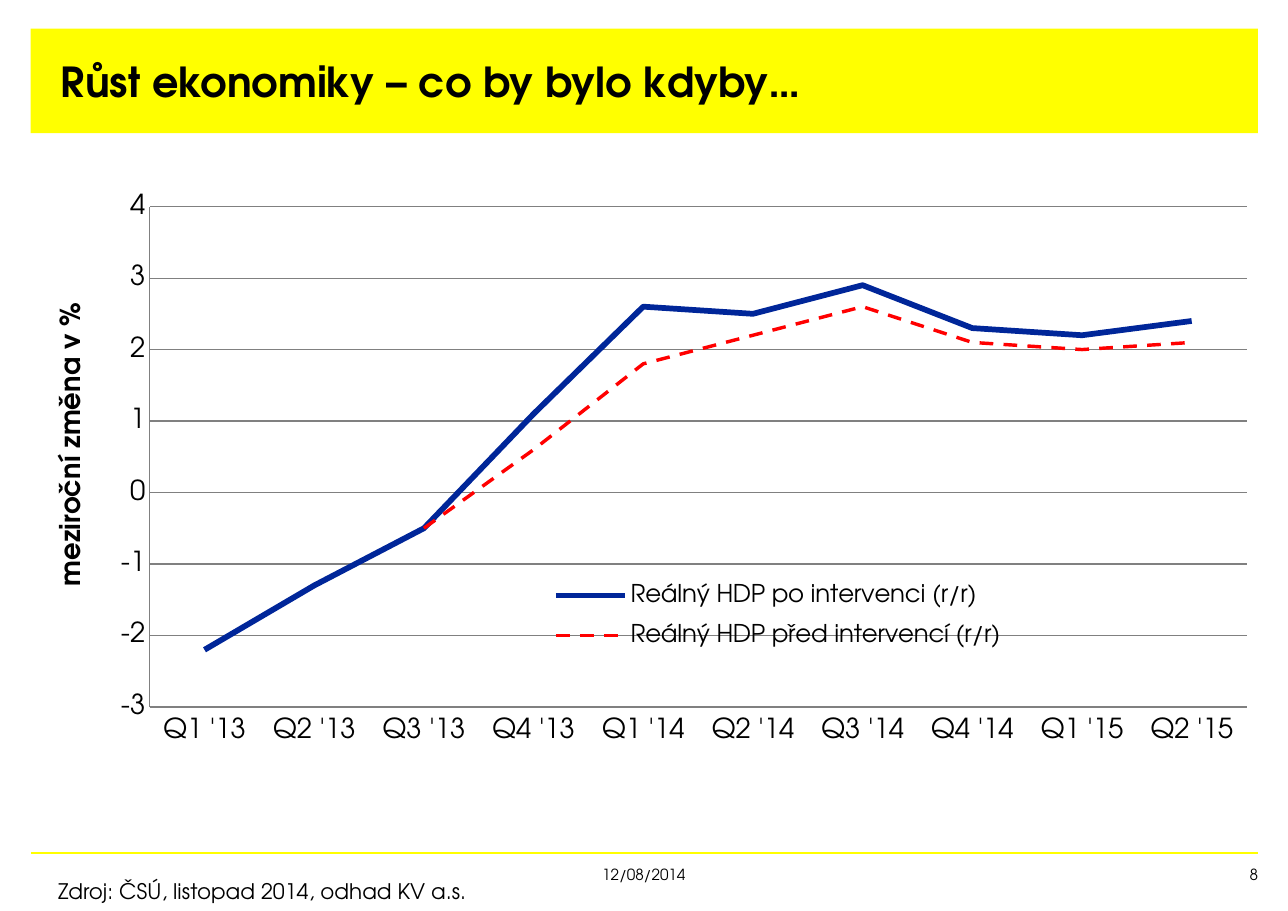
"""Builds a slide with a line chart of Czech GDP growth with and without intervention."""
from dataclasses import dataclass

from lxml import etree
from pptx import Presentation
from pptx import util as u
from pptx.chart import data
from pptx.dml import color
from pptx.enum import chart as ch, dml, shapes, text
from pptx.oxml import ns


@dataclass(frozen=True)
class Theme:
    font: str = "TeX Gyre Adventor"
    ink: str = "000000"
    band: str = "FFFF00"
    grid: str = "808080"
    after: str = "002699"
    before: str = "FF0000"
    title_size: float = 27
    chart_size: float = 18
    legend_size: float = 16
    source_size: float = 14
    footer_size: float = 10


def apply(target, values):
    for name, value in values.items():
        setattr(target, name, value)


def place(shape, box):
    apply(shape, dict(zip(("left", "top", "width", "height"), map(u.Cm, box))))


def set_layout(parent, index, **values):
    for old in parent.findall(ns.qn("c:layout")):
        parent.remove(old)
    layout = etree.Element(ns.qn("c:layout"))
    manual = etree.SubElement(layout, ns.qn("c:manualLayout"))
    for name, value in values.items():
        etree.SubElement(manual, ns.qn(f"c:{name}")).set("val", str(value))
    parent.insert(index, layout)


class SlideBuilder:
    def __init__(self, slide, theme):
        self.slide = slide
        self.theme = theme

    def style_font(self, font, size, bold=False):
        apply(font, {"name": self.theme.font, "size": u.Pt(size), "bold": bold})
        font.color.rgb = color.RGBColor.from_string(self.theme.ink)

    def style_line(self, line, rgb, width):
        line.color.rgb = color.RGBColor.from_string(rgb)
        line.width = u.Pt(width)

    def fill_text(self, shape, words, size, align, anchor, insets=(0, 0, 0, 0), bold=False):
        frame = shape.text_frame
        margins = ("margin_left", "margin_top", "margin_right", "margin_bottom")
        apply(frame, {"word_wrap": True, "auto_size": text.MSO_AUTO_SIZE.NONE,
                      "vertical_anchor": anchor, **dict(zip(margins, map(u.Cm, insets)))})
        paragraph = frame.paragraphs[0]
        paragraph.alignment = align
        run = paragraph.add_run()
        run.text = words
        self.style_font(run.font, size, bold)

    def band(self, box):
        band = self.slide.shapes.add_shape(shapes.MSO_SHAPE.RECTANGLE, *map(u.Cm, box))
        band.shadow.inherit = False
        band.fill.solid()
        band.fill.fore_color.rgb = color.RGBColor.from_string(self.theme.band)
        band.line.fill.background()
        self.slide.shapes._spTree.insert(2, band._element)

    def title(self, words, box):
        title = self.slide.shapes.title
        place(title, box)
        self.fill_text(title, words, self.theme.title_size, text.PP_ALIGN.LEFT,
                       text.MSO_ANCHOR.MIDDLE, bold=True)

    def rule(self, left, right, top):
        rule = self.slide.shapes.add_connector(
            shapes.MSO_CONNECTOR.STRAIGHT, *map(u.Cm, (left, top, right, top)))
        self.style_line(rule.line, self.theme.band, 1)
        etree.SubElement(rule._element.spPr, ns.qn("a:effectLst"))

    def label(self, words, box, size, align=text.PP_ALIGN.LEFT, insets=(0, 0, 0, 0)):
        label = self.slide.shapes.add_textbox(*map(u.Cm, box))
        self.fill_text(label, words, size, align, text.MSO_ANCHOR.TOP, insets)

    def line_chart(self, box, categories, series, value_title):
        chart_data = data.CategoryChartData(number_format="0.0")
        chart_data.categories = categories
        for name, values, *_ in series:
            chart_data.add_series(name, values)
        chart = self.slide.shapes.add_chart(
            ch.XL_CHART_TYPE.LINE, *map(u.Cm, box), chart_data).chart
        apply(chart, {"has_title": False, "has_legend": True})
        self.style_font(chart.font, self.theme.chart_size)
        chart.plots[0].vary_by_categories = False
        for line, (_, _, rgb, width, dash) in zip(chart.plots[0].series, series):
            line.smooth = False
            line.marker.style = ch.XL_MARKER_STYLE.NONE
            self.style_line(line.format.line, rgb, width)
            line.format.line.dash_style = dash
        self.axes(chart, value_title)
        self.legend(chart.legend)
        set_layout(chart._chartSpace.chart.plotArea, 0, layoutTarget="inner",
                   xMode="edge", yMode="edge", x=0.1, y=0.05, w=0.89, h=0.82)

    def axes(self, chart, value_title):
        ticks = {"major_tick_mark": ch.XL_TICK_MARK.NONE,
                 "minor_tick_mark": ch.XL_TICK_MARK.NONE}
        for axis in (chart.category_axis, chart.value_axis):
            apply(axis, ticks)
            self.style_line(axis.format.line, self.theme.grid, 0.75)
            self.style_font(axis.tick_labels.font, self.theme.chart_size)
        chart.category_axis.tick_label_position = ch.XL_TICK_LABEL_POSITION.LOW
        axis = chart.value_axis
        apply(axis, {"minimum_scale": -3, "maximum_scale": 4, "major_unit": 1,
                     "has_major_gridlines": True, "has_title": True})
        apply(axis.tick_labels, {"number_format": "0", "number_format_is_linked": False})
        self.style_line(axis.major_gridlines.format.line, self.theme.grid, 0.75)
        run = axis.axis_title.text_frame.paragraphs[0].add_run()
        run.text = value_title
        self.style_font(run.font, self.theme.chart_size, bold=True)
        set_layout(axis.axis_title._element, 1, xMode="edge", yMode="edge", x=0.02, y=0.2)

    def legend(self, legend):
        apply(legend, {"position": ch.XL_LEGEND_POSITION.RIGHT, "include_in_layout": False})
        self.style_font(legend.font, self.theme.legend_size)
        set_layout(legend._element, 1, xMode="edge", yMode="edge",
                   x=0.42, y=0.64, w=0.38, h=0.16)


def main():
    theme = Theme()
    presentation = Presentation()
    apply(presentation, {"slide_width": u.Cm(29.7), "slide_height": u.Cm(21)})
    slide = presentation.slides.add_slide(presentation.slide_layouts[5])
    builder = SlideBuilder(slide, theme)

    builder.band((0.71, 0.66, 28.3, 2.41))
    builder.rule(0.71, 29.01, 19.66)
    builder.title("Růst ekonomiky – co by bylo kdyby…", (1.4, 0.66, 22.76, 2.41))
    builder.label("12/08/2014", (12.52, 19.94, 4.65, 1.07), theme.footer_size,
                  text.PP_ALIGN.CENTER)
    builder.label("8", (17.17, 19.94, 11.84, 1.07), theme.footer_size, text.PP_ALIGN.RIGHT)
    builder.label("Zdroj: ČSÚ, listopad 2014, odhad KV a.s.", (1.04, 19.84, 12.6, 1.14),
                  theme.source_size, insets=(0.3, 0.4, 0.3, 0))

    quarters = [f"Q{i % 4 + 1} '{13 + i // 4}" for i in range(10)]
    series = [
        ("Reálný HDP po intervenci (r/r)",
         (-2.2, -1.3, -0.5, 1.1, 2.6, 2.5, 2.9, 2.3, 2.2, 2.4),
         theme.after, 3.75, dml.MSO_LINE.SOLID),
        ("Reálný HDP před intervencí (r/r)",
         (None, None, -0.5, 0.6, 1.8, 2.2, 2.6, 2.1, 2, 2.1),
         theme.before, 2.25, dml.MSO_LINE.DASH),
    ]
    builder.line_chart((0.61, 4.06, 28.42, 14.07), quarters, series, "meziroční změna v %")
    presentation.save("out.pptx")


if __name__ == "__main__":
    main()
